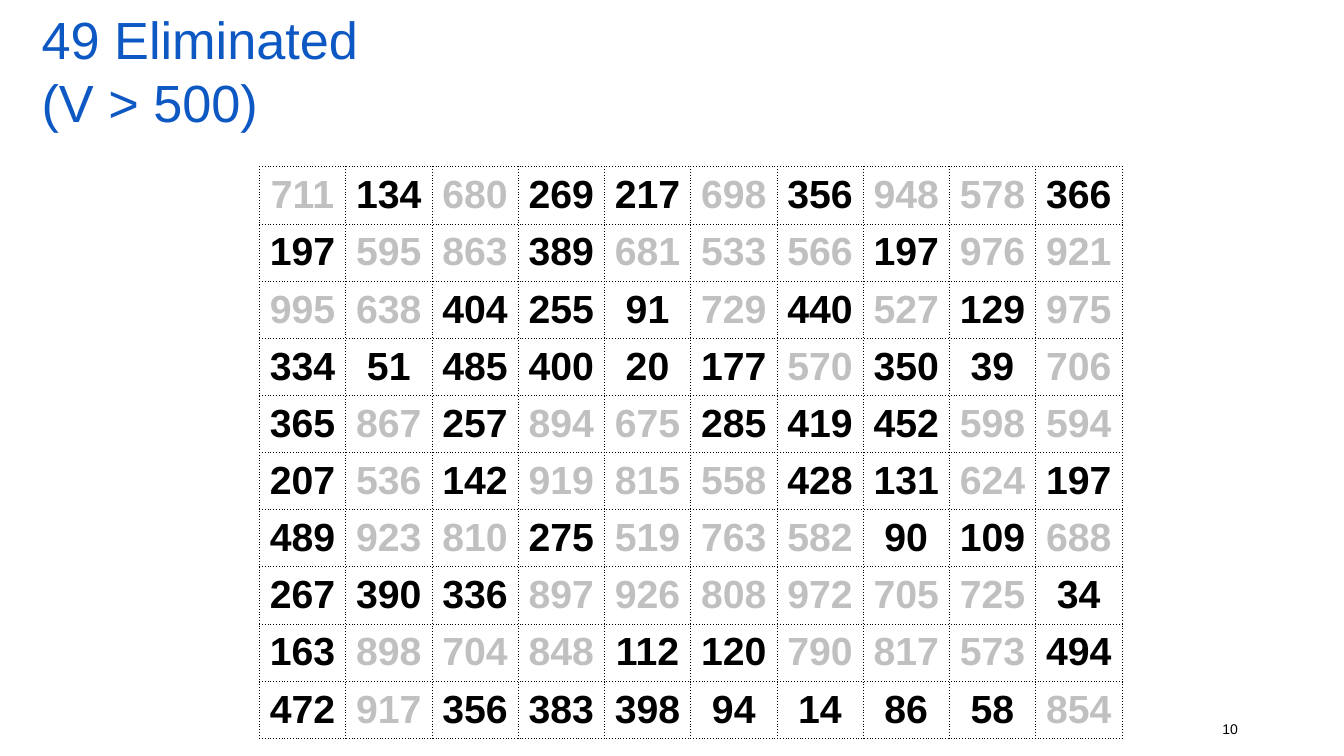
import pptx
import pptx.dml.color
import pptx.enum.text
import pptx.oxml
import pptx.oxml.ns
import pptx.util
from pptx.util import Inches

COLORS = {"title": "0E58C4", "kept": "000000", "eliminated": "C0C0C0", "border": "000000"}
LIMIT = 500
VALUES = [
    [711, 134, 680, 269, 217, 698, 356, 948, 578, 366],
    [197, 595, 863, 389, 681, 533, 566, 197, 976, 921],
    [995, 638, 404, 255, 91, 729, 440, 527, 129, 975],
    [334, 51, 485, 400, 20, 177, 570, 350, 39, 706],
    [365, 867, 257, 894, 675, 285, 419, 452, 598, 594],
    [207, 536, 142, 919, 815, 558, 428, 131, 624, 197],
    [489, 923, 810, 275, 519, 763, 582, 90, 109, 688],
    [267, 390, 336, 897, 926, 808, 972, 705, 725, 34],
    [163, 898, 704, 848, 112, 120, 790, 817, 573, 494],
    [472, 917, 356, 383, 398, 94, 14, 86, 58, 854],
]


class SlideBuilder:
    font = "Arial"
    align = pptx.enum.text.PP_ALIGN
    anchor = pptx.enum.text.MSO_ANCHOR

    def __init__(self, prs):
        self.s = prs.slides.add_slide(prs.slide_layouts[5])

    def style(self, p, size, color, align, bold=False):
        p.alignment = align
        p.font.name = self.font
        p.font.size = pptx.util.Pt(size)
        p.font.bold = bold
        p.font.color.rgb = pptx.dml.color.RGBColor.from_string(COLORS[color])

    def title(self, text, left, top, width, height):
        sp = self.s.shapes.title
        sp.left, sp.top, sp.width, sp.height = map(Inches, (left, top, width, height))
        tf = sp.text_frame
        tf.text = text
        tf.word_wrap = True
        tf.auto_size = pptx.enum.text.MSO_AUTO_SIZE.NONE
        tf.vertical_anchor = self.anchor.MIDDLE
        tf.margin_left = tf.margin_right = tf.margin_top = tf.margin_bottom = Inches(0.1)
        self.style(tf.paragraphs[0], 28, "title", self.align.LEFT)

    def page_number(self, text, left, top, width, height):
        sp = self.s.shapes.add_textbox(*map(Inches, (left, top, width, height)))
        tf = sp.text_frame
        tf.text = text
        tf.word_wrap = True
        tf.vertical_anchor = self.anchor.BOTTOM
        tf.margin_bottom = Inches(0.02)
        self.style(tf.paragraphs[0], 7.5, "kept", self.align.RIGHT)

    def borders(self, cell):
        pr = cell._tc.get_or_add_tcPr()
        for i, side in enumerate(("lnL", "lnR", "lnT", "lnB")):
            pr.insert(i, pptx.oxml.parse_xml(
                f'<a:{side} {pptx.oxml.ns.nsdecls("a")} w="{pptx.util.Pt(0.25)}">'
                f'<a:solidFill><a:srgbClr val="{COLORS["border"]}"/></a:solidFill>'
                f'<a:prstDash val="sysDot"/></a:{side}>'))

    def number_grid(self, values, left, top, width, height):
        rows, cols = len(values), len(values[0])
        frame = self.s.shapes.add_table(rows, cols, *map(Inches, (left, top, width, height)))
        table = frame.table
        table.first_row = table.horz_banding = False
        for column in table.columns:
            column.width = Inches(width / cols)
        for row, numbers in zip(table.rows, values):
            row.height = Inches(height / rows)
            for cell, number in zip(row.cells, numbers):
                cell.text = str(number)
                cell.fill.background()
                cell.vertical_anchor = self.anchor.MIDDLE
                cell.margin_left = cell.margin_right = pptx.util.Pt(5.4)
                cell.margin_top = cell.margin_bottom = pptx.util.Pt(2.7)
                color = "eliminated" if number > LIMIT else "kept"
                self.style(cell.text_frame.paragraphs[0], 21, color, self.align.CENTER, True)
                self.borders(cell)


def main():
    prs = pptx.Presentation()
    # Widescreen, 16:9
    prs.slide_width, prs.slide_height = Inches(10), Inches(10 * 9 / 16)
    slide = SlideBuilder(prs)

    # Page number
    slide.page_number("10", 7.06, 5.21, 2.25, 0.3)
    # Grid of values, greyed out above the limit
    slide.number_grid(VALUES, 1.93, 1.24, 6.42, 4.25)
    # Title
    slide.title(f"49 Eliminated\v(V > {LIMIT})", 0.21, 0.28, 7.45, 0.48)

    prs.save("out.pptx")


if __name__ == "__main__":
    main()
